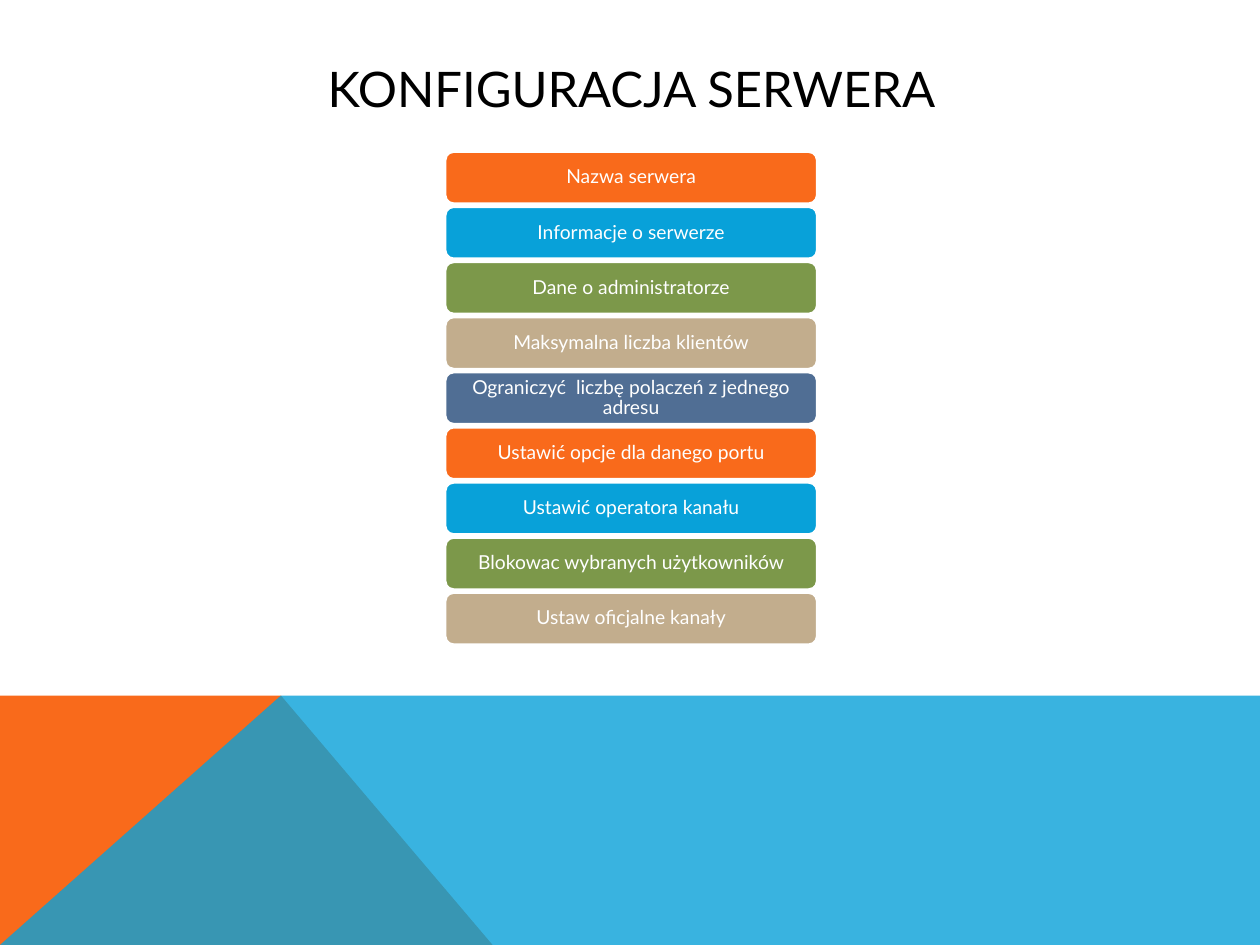
from lxml import etree
from pptx import Presentation
from pptx.dml.color import RGBColor
from pptx.enum.shapes import MSO_SHAPE as SHAPE
from pptx.enum.text import MSO_ANCHOR as ANCHOR, PP_ALIGN as ALIGN
from pptx.oxml.ns import qn
from pptx.util import Inches, Pt

FONT = "Lato"
ORANGE, BLUE, GREEN, TAN, NAVY = "F96A1B", "08A1D9", "7C984A", "C2AD8D", "506E94"
BAR_COLORS = [ORANGE, BLUE, GREEN, TAN, NAVY]
SETTINGS = [
    "Nazwa serwera",
    "Informacje o serwerze",
    "Dane o administratorze",
    "Maksymalna liczba klientów",
    "Ograniczyć  liczbę polaczeń z jednego adresu",
    "Ustawić opcje dla danego portu",
    "Ustawić operatora kanału",
    "Blokowac wybranych użytkowników",
    "Ustaw oficjalne kanały",
]


def rgb(color):
    return RGBColor.from_string(color)


def write(sp, text, size, color):
    tf = sp.text_frame
    tf.word_wrap = True
    tf.vertical_anchor = ANCHOR.MIDDLE
    p = tf.paragraphs[0]
    p.alignment = ALIGN.CENTER
    r = p.add_run()
    r.text = text
    r.font.name, r.font.size = FONT, Pt(size)
    r.font.color.rgb = rgb(color)
    return tf


def add_polygon(s, points, color, opacity=100):
    start, *rest = [(Inches(x), Inches(y)) for x, y in points]
    builder = s.shapes.build_freeform(*start)
    builder.add_line_segments(rest, close=True)
    sp = builder.convert_to_shape()
    sp.shadow.inherit = False
    sp.fill.solid()
    sp.fill.fore_color.rgb = rgb(color)
    sp.line.fill.background()
    if opacity < 100:
        clr = sp.fill._xPr.find(f"{qn('a:solidFill')}/{qn('a:srgbClr')}")
        etree.SubElement(clr, qn("a:alpha")).set("val", str(opacity * 1000))


def add_footer_band(s, left, top, width, height):
    """Orange triangle under a translucent blue sheet, meeting at one peak."""
    right, bottom = left + width, top + height
    peak = (left + 2.23, top)
    add_polygon(s, [(left, bottom), (left, top), peak, (left + 3.91, bottom)], ORANGE)
    add_polygon(s, [(left, bottom), peak, (right, top), (right, bottom)], BLUE, 80)


def add_title(s, text, left, top, width, height):
    sp = s.shapes.add_textbox(Inches(left), Inches(top), Inches(width), Inches(height))
    write(sp, text, 28, "000000")


def add_settings_list(s, labels, left, top, width, height, bar_height=0.42):
    pitch = (height - bar_height) / (len(labels) - 1)
    for i, label in enumerate(labels):
        sp = s.shapes.add_shape(SHAPE.ROUNDED_RECTANGLE, Inches(left), Inches(top + i * pitch),
                                Inches(width), Inches(bar_height))
        sp.shadow.inherit = False
        sp.fill.solid()
        sp.fill.fore_color.rgb = rgb(BAR_COLORS[i % len(BAR_COLORS)])
        sp.line.color.rgb = rgb("FFFFFF")
        sp.line.width = Pt(2)
        tf = write(sp, label, 11, "FFFFFF")
        tf.margin_left = tf.margin_right = Inches(0.05)
        tf.margin_top = tf.margin_bottom = Inches(0.02)
        tf.paragraphs[0].line_spacing = 0.9


def main():
    prs = Presentation()
    prs.slide_width, prs.slide_height = Inches(10), Inches(7.5)
    s = prs.slides.add_slide(prs.slide_layouts[6])
    add_footer_band(s, 0, 5.52, 10, 1.98)
    add_title(s, "KONFIGURACJA SERWERA", 0.9, 0.4, 8.22, 0.6)
    add_settings_list(s, SETTINGS, 3.53, 1.2, 2.96, 3.92)
    prs.save("out.pptx")


if __name__ == "__main__":
    main()
